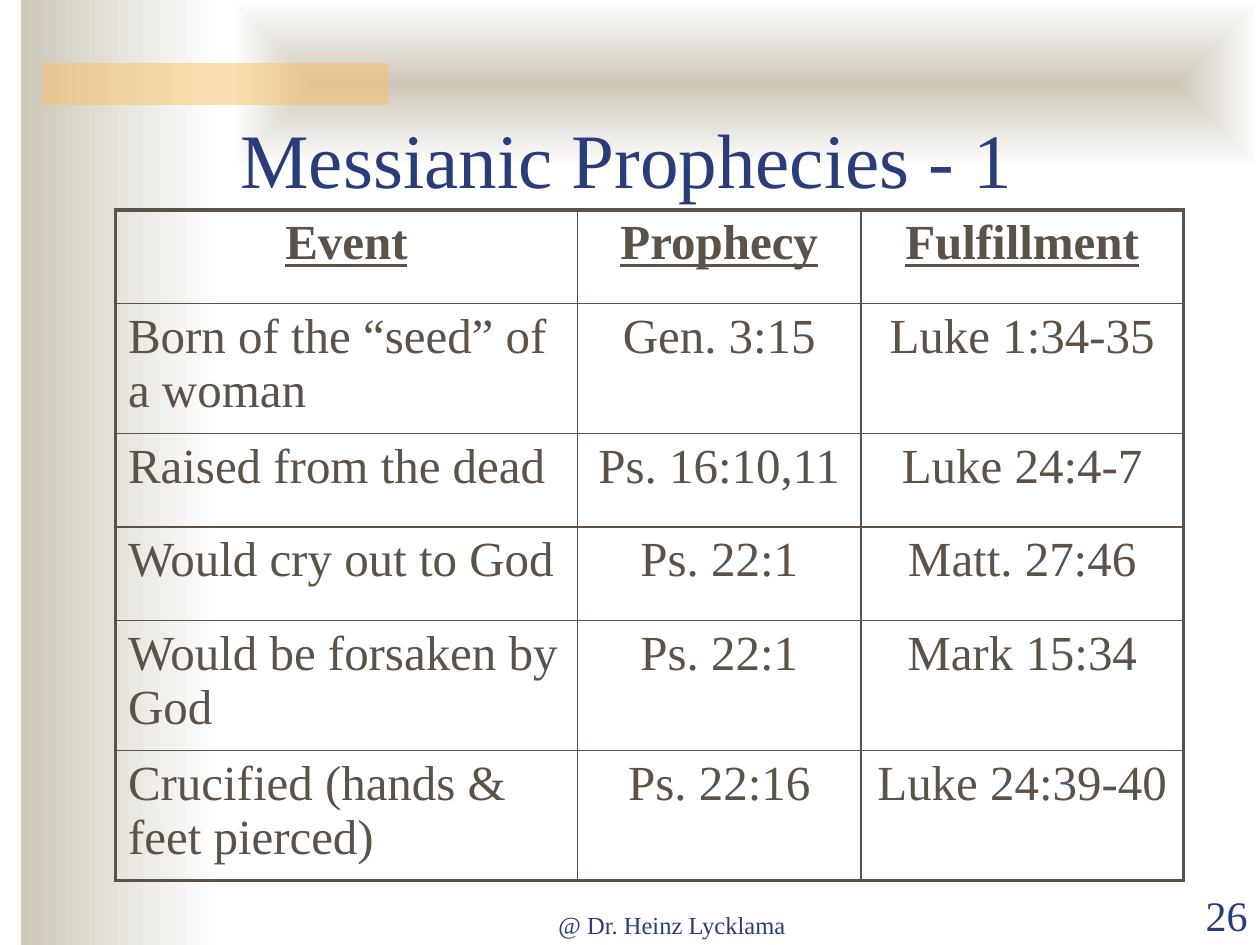
import pptx
import pptx.dml.color
import pptx.enum.shapes
import pptx.enum.text
import pptx.oxml
import pptx.oxml.ns
import pptx.util
from lxml import etree

FONT = "Times New Roman"
NAVY, BROWN, SAND, AMBER, WHITE = "2A3D7A", "5B5249", "CEC8BA", "FAC164", "FFFFFF"
ALIGN = pptx.enum.text.PP_ALIGN
UNIT = pptx.util.Inches(1) / 12
COLUMNS, ROWS = 120, 90
ROW_HEIGHTS = [8.9, 12.4, 8.9, 8.9, 12.4, 12.4]
COLUMN_WIDTHS = [44, 27, 30.7]
PROPHECIES = [
    ("Event", "Prophecy", "Fulfillment"),
    ("Born of the “seed” of a woman", "Gen. 3:15", "Luke 1:34-35"),
    ("Raised from the dead", "Ps. 16:10,11", "Luke 24:4-7"),
    ("Would cry out to God", "Ps. 22:1", "Matt. 27:46"),
    ("Would be forsaken by God", "Ps. 22:1", "Mark 15:34"),
    ("Crucified (hands & feet pierced)", "Ps. 22:16", "Luke 24:39-40"),
]


def grid(*cells):
    """Turn grid units into whole EMU lengths."""
    return [pptx.util.Emu(round(c * UNIT)) for c in cells]


def rgb(value):
    """Return the colour for a hex string."""
    return pptx.dml.color.RGBColor.from_string(value)


def add_run(p, text, size, color, align, heading=False):
    """Add one formatted run to an aligned paragraph."""
    p.alignment = align
    r = p.add_run()
    r.text = text
    r.font.name, r.font.size = FONT, pptx.util.Pt(size)
    r.font.color.rgb = rgb(color)
    r.font.bold = r.font.underline = heading


def add_text(sp, text, size, align):
    """Fill a text shape with a bottom-anchored line."""
    tf = sp.text_frame
    tf.word_wrap = True
    tf.auto_size = pptx.enum.text.MSO_AUTO_SIZE.NONE
    tf.vertical_anchor = pptx.enum.text.MSO_ANCHOR.BOTTOM
    add_run(tf.paragraphs[0], text, size, NAVY, align)


def add_panel(s, box):
    """Add a rectangle without line or shadow and return it."""
    sp = s.shapes.add_shape(pptx.enum.shapes.MSO_SHAPE.RECTANGLE, *grid(*box))
    sp.shadow.inherit = False
    sp.line.fill.background()
    return sp


def add_fade(s, box):
    """Add a panel that fades from sand to white, left to right."""
    sp = add_panel(s, box)
    sp.fill.gradient()
    sp.fill.gradient_angle = 0
    for stop, color, position in zip(sp.fill.gradient_stops, (SAND, WHITE), (0, 1)):
        stop.color.rgb, stop.position = rgb(color), position
    return sp


def add_backdrop(s, left, top, width, height):
    """Draw the side fade, the top fade and the translucent bar."""
    add_fade(s, (left + 2, top, 19, height))
    sp = add_fade(s, (left + 22, top, width - 22, 16))
    lin = sp.element.spPr.find(".//" + pptx.oxml.ns.qn("a:lin"))
    lin.getparent().replace(lin, pptx.oxml.parse_xml(
        f'<a:path {pptx.oxml.ns.nsdecls("a")} path="shape">'
        '<a:fillToRect l="50000" t="50000" r="50000" b="50000"/></a:path>'))
    bar = add_panel(s, (left + 4, top + 6, 33, 4))
    bar.fill.solid()
    bar.fill.fore_color.rgb = rgb(AMBER)
    color = bar.element.spPr.find(".//" + pptx.oxml.ns.qn("a:srgbClr"))
    etree.SubElement(color, pptx.oxml.ns.qn("a:alpha"), val="50000")


def add_footer(s, left, top, width, height):
    """Place the author line and the page number."""
    author = s.shapes.add_textbox(*grid(left + 45, top, 38, height))
    add_text(author, "@ Dr. Heinz Lycklama", 14, ALIGN.CENTER)
    number = s.shapes.add_textbox(*grid(left + width - 12, top, 12, height))
    add_text(number, "26", 24, ALIGN.RIGHT)


def add_title(s, *box):
    """Place the title placeholder above the backdrop."""
    sp = s.shapes.title
    sp.left, sp.top, sp.width, sp.height = grid(*box)
    add_text(sp, "Messianic Prophecies - 1", 44, ALIGN.CENTER)
    s.shapes.element.append(sp.element)


def set_border(cell, side, width):
    """Draw one side of a table cell."""
    tcPr = cell._tc.get_or_add_tcPr()
    ln = etree.SubElement(tcPr, pptx.oxml.ns.qn("a:ln" + side), w=str(pptx.util.Pt(width)))
    fill = etree.SubElement(ln, pptx.oxml.ns.qn("a:solidFill"))
    etree.SubElement(fill, pptx.oxml.ns.qn("a:srgbClr"), val=BROWN)


def add_prophecies(s, *box):
    """Build the table with a heavy frame and thin inner rules."""
    last_row, last_col = len(ROW_HEIGHTS) - 1, len(COLUMN_WIDTHS) - 1
    table = s.shapes.add_table(last_row + 1, last_col + 1, *grid(*box)).table
    table.first_row = table.horz_banding = False
    for column, width in zip(table.columns, grid(*COLUMN_WIDTHS)):
        column.width = width
    for row, height in zip(table.rows, grid(*ROW_HEIGHTS)):
        row.height = height
    for i, texts in enumerate(PROPHECIES):
        for j, text in enumerate(texts):
            cell = table.cell(i, j)
            outer = {"L": j == 0, "R": j == last_col, "T": i == 0, "B": i == last_row}
            for side, heavy in outer.items():
                set_border(cell, side, 2.25 if heavy else 1)
            cell.fill.background()
            align = ALIGN.LEFT if i and not j else ALIGN.CENTER
            add_run(cell.text_frame.paragraphs[0], text, 28, BROWN, align, i == 0)


def main():
    """Build and save the slide."""
    prs = pptx.Presentation()
    prs.slide_width, prs.slide_height = grid(COLUMNS, ROWS)
    s = prs.slides.add_slide(prs.slide_layouts[5])
    add_backdrop(s, 0, 0, COLUMNS, ROWS)
    add_footer(s, 0, 84.1, COLUMNS, 6)
    add_title(s, 20.8, 11, 77.8, 9)
    add_prophecies(s, 11, 20, sum(COLUMN_WIDTHS), sum(ROW_HEIGHTS))
    prs.save("out.pptx")


if __name__ == "__main__":
    main()
